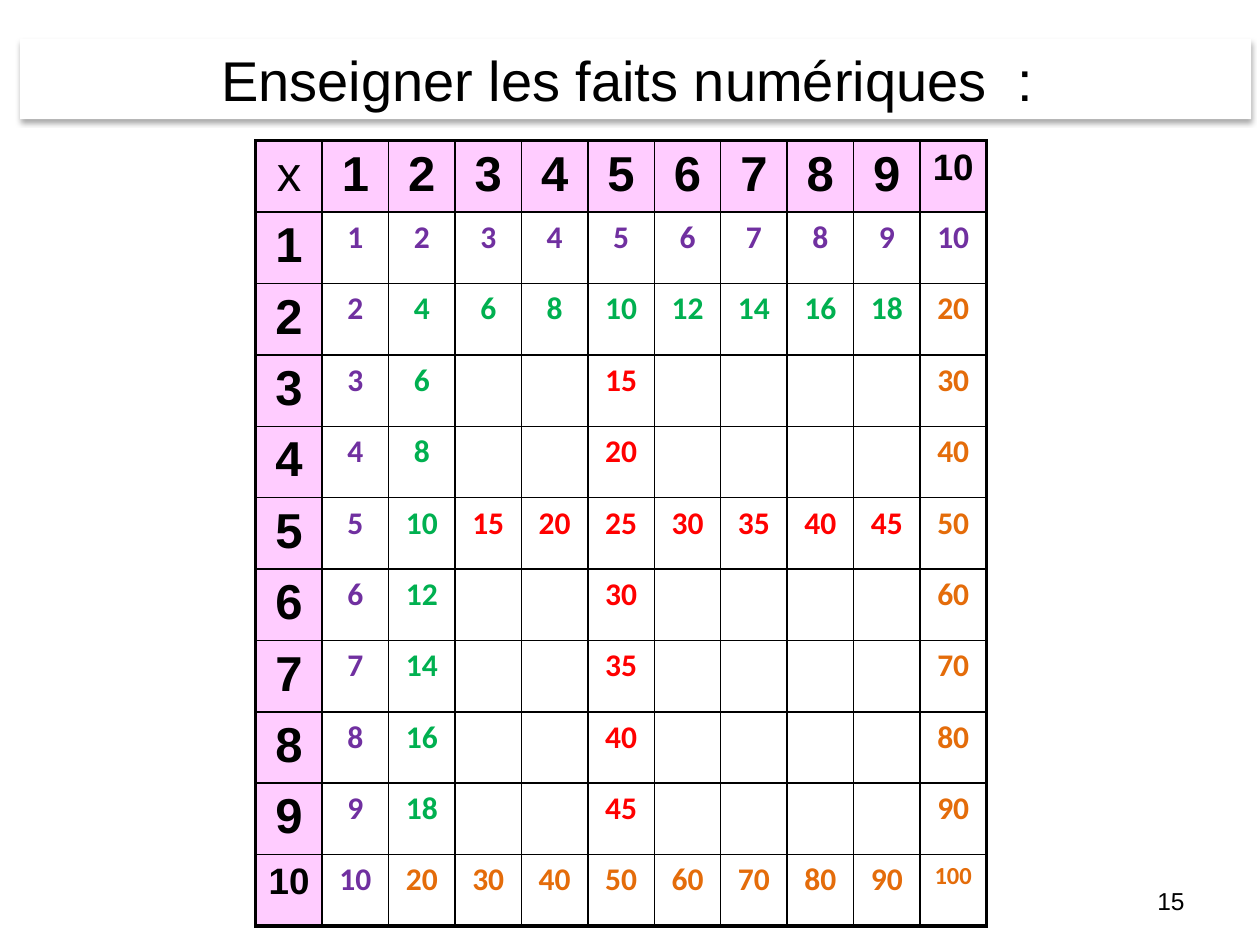
"""Builds a slide with the multiplication facts to learn, coloured by table."""
from lxml.etree import SubElement as Sub
from pptx import Presentation as Deck
from pptx.dml.color import RGBColor as Rgb
from pptx.enum.text import MSO_ANCHOR as Anchor, MSO_AUTO_SIZE as Auto, PP_ALIGN as Align
from pptx.oxml.ns import qn
from pptx.util import Inches, Pt

HUES = {"ink": "000000", "paper": "FFFFFF", "head": "FFCCFF",
        "one": "7030A0", "two": "00B050", "five": "FF0000", "ten": "E46C0A"}
FACTS = {1: "one", 10: "ten", 2: "two", 5: "five"}
LAST = 10


def write(frame, text, size=18, font="Arial", hue="ink", bold=False,
          align=Align.CENTER, lead=0):
    para = frame.paragraphs[0]
    para.alignment = align
    if lead:
        gap = Sub(para._p.get_or_add_pPr(), qn("a:spcBef"))
        Sub(gap, qn("a:spcPct"), val=str(lead * 1000))
    run = para.add_run()
    run.text = text
    run.font.size, run.font.name, run.font.bold = Pt(size), font, bold
    run.font.color.rgb = Rgb.from_string(HUES[hue])


class Page:
    def __init__(self, wide, high):
        self.deck = Deck()
        self.wide, self.high = Inches(wide), Inches(high)
        self.deck.slide_width, self.deck.slide_height = self.wide, self.high
        self.slide = self.deck.slides.add_slide(self.deck.slide_layouts[5])

    def box(self, x, y, w, h):
        return [round(part * side) for part, side in
                zip((x, y, w, h), (self.wide, self.high) * 2)]

    def fill(self, item, hue):
        item.fill.solid()
        item.fill.fore_color.rgb = Rgb.from_string(HUES[hue])

    def shade(self, shape):
        glow = Sub(shape._element.spPr, qn("a:effectLst"))
        cast = Sub(glow, qn("a:outerShdw"), blurRad=str(Pt(3.1)),
                   dist=str(Pt(1.8)), dir="5400000", rotWithShape="0")
        tint = Sub(cast, qn("a:srgbClr"), val=HUES["ink"])
        Sub(tint, qn("a:alpha"), val="35000")

    def title(self, text, *place):
        shape = self.slide.shapes.title
        shape.left, shape.top, shape.width, shape.height = self.box(*place)
        self.fill(shape, "paper")
        self.shade(shape)
        frame = shape.text_frame
        frame.auto_size, frame.vertical_anchor = Auto.NONE, Anchor.MIDDLE
        write(frame, text, size=32)

    def label(self, text, *place, **style):
        frame = self.slide.shapes.add_textbox(*self.box(*place)).text_frame
        frame.word_wrap, frame.vertical_anchor = True, Anchor.MIDDLE
        write(frame, text, **style)

    def edge(self, cell, row, col):
        props = cell._tc.get_or_add_tcPr()
        outer = {"L": col == 0, "R": col == LAST, "T": row == 0, "B": row == LAST}
        for side, thick in outer.items():
            line = Sub(props, qn(f"a:ln{side}"), w=str(Pt(2.25 if thick else 1)))
            Sub(Sub(line, qn("a:solidFill")), qn("a:srgbClr"), val=HUES["ink"])

    def table(self, *place):
        x, y, w, h = self.box(*place)
        count = LAST + 1
        grid = self.slide.shapes.add_table(count, count, x, y, w, h).table
        grid.first_row = grid.horz_banding = False
        for row in range(count):
            grid.rows[row].height = h // count
            grid.columns[row].width = w // count
            for col in range(count):
                self.cell(grid.cell(row, col), row, col)

    def cell(self, cell, row, col):
        self.edge(cell, row, col)
        if row == 0 or col == 0:
            self.fill(cell, "head")
            num = row + col
            write(cell.text_frame, str(num or "x"), size=21 if num == LAST else 28,
                  bold=num > 0, lead=20)
            return
        cell.fill.background()
        hue = next((FACTS[key] for key in FACTS if key in (row, col)), None)
        if hue:
            size = 14 if row == col == LAST else 18
            write(cell.text_frame, str(row * col), size=size, font="Calibri",
                  hue=hue, bold=True, lead=20)


def main():
    page = Page(10, 7.5)
    page.title("Enseigner les faits numériques  : ", 0.016, 0.041, 0.977, 0.085)
    page.table(0.203, 0.149, 0.58, 0.831)
    page.label("15", 0.717, 0.927, 0.233, 0.053, size=14, align=Align.RIGHT)
    page.deck.save("out.pptx")


if __name__ == "__main__":
    main()
